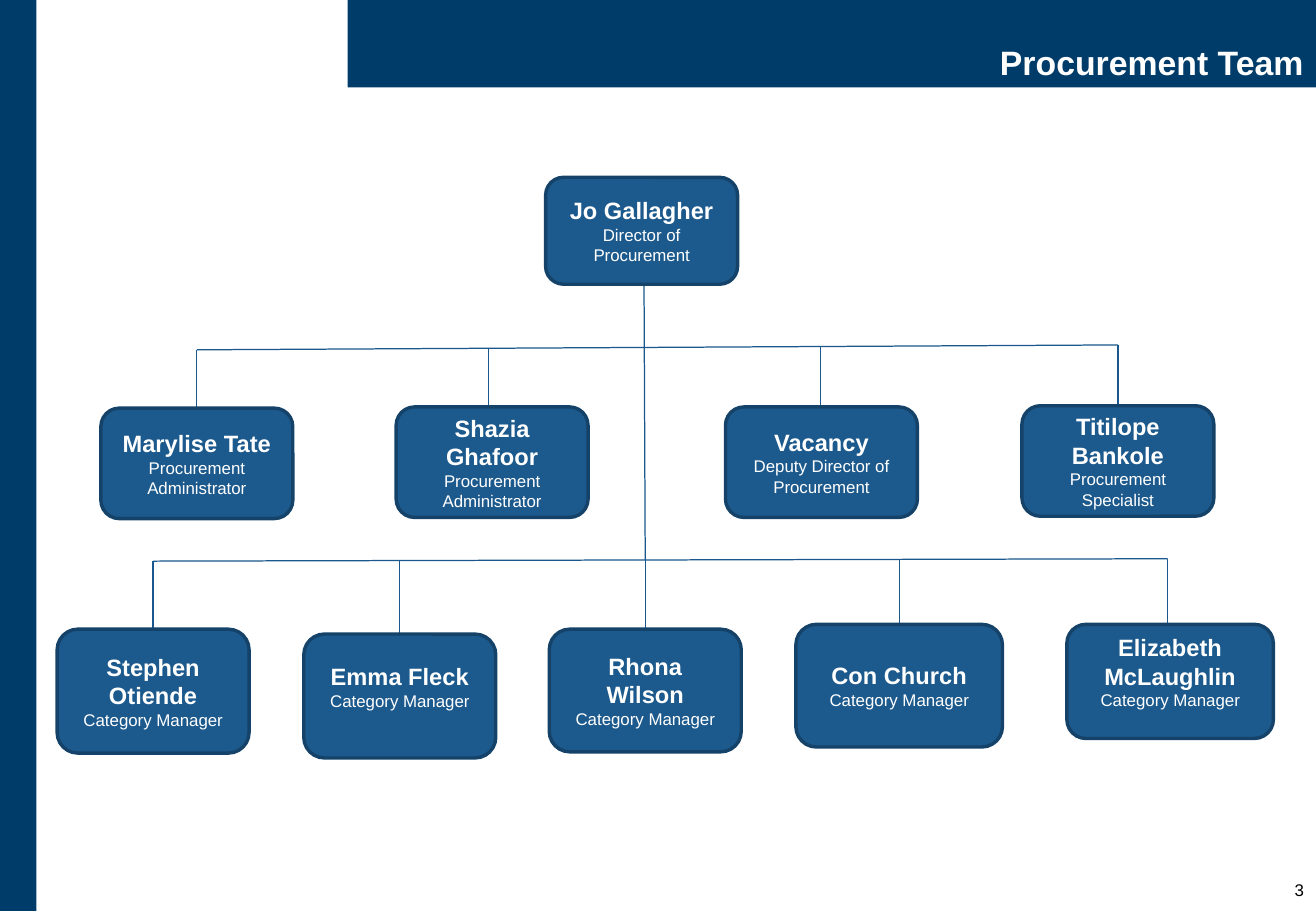
from collections import namedtuple
from dataclasses import dataclass

from lxml.etree import SubElement
from pptx import Presentation
from pptx.dml.color import RGBColor
from pptx.enum.shapes import MSO_CONNECTOR, MSO_SHAPE
from pptx.enum.text import MSO_ANCHOR as Anchor, MSO_AUTO_SIZE, PP_ALIGN as Align
from pptx.oxml.ns import qn
from pptx.util import Inches, Pt


@dataclass(frozen=True)
class Theme:
    font: str = "Arial"
    navy: str = "003C69"
    box: str = "1C598C"
    border: str = "154268"
    link: str = "19578C"
    light: str = "FFFFFF"
    dark: str = "000000"
    title_size: int = 20
    name_size: int = 14
    small_size: int = 10
    border_width: float = 2
    link_width: float = 0.75


THEME = Theme()
BOX_WIDTH, WIDE_BOX = 1.58, 1.7
LOW_MARGIN, RAISED_MARGIN = 0.05, 0.21

# drop is the x of the link from the rail above; bottom is the lower text margin
Member = namedtuple("Member", "name role left top height drop width bottom",
                    defaults=(None, BOX_WIDTH, LOW_MARGIN))
# the rail runs from (x1, y1) to (x2, y2)
Tier = namedtuple("Tier", "rail members")

TITLE = "Procurement Team"
PAGE_NUMBER = "3"
DIRECTOR = Member("Jo Gallagher", "Director of Procurement", 4.49, 1.46, 0.88)
TRUNK = (5.3, 2.34, 5.31, 4.61)
TIERS = [
    Tier((1.62, 2.88, 9.2, 2.84), [
        Member("Marylise Tate", "Procurement Administrator", 0.83, 3.36, 0.91, 1.62),
        Member("Shazia Ghafoor", "Procurement Administrator", 3.26, 3.35, 0.91, 4.02),
        Member("Vacancy", "Deputy Director of Procurement", 5.97, 3.35, 0.91, 6.75),
        Member("Titilope Bankole", "Procurement Specialist", 8.41, 3.34, 0.91, 9.2),
    ]),
    Tier((1.26, 4.62, 9.61, 4.6), [
        Member("Stephen Otiende", "Category Manager", 0.47, 5.18, 1.02, 1.26),
        Member("Emma Fleck", "Category Manager", 2.5, 5.22, 1.02, 3.29,
               bottom=RAISED_MARGIN),
        Member("Rhona Wilson", "Category Manager", 4.52, 5.18, 1.01, 5.31),
        Member("Con Church", "Category Manager", 6.55, 5.14, 1.01, 7.4, WIDE_BOX),
        Member("Elizabeth McLaughlin", "Category Manager", 8.78, 5.14, 0.94, 9.61,
               WIDE_BOX, RAISED_MARGIN),
    ]),
]


def paint(shape, color):
    shape.fill.solid()
    shape.fill.fore_color.rgb = RGBColor.from_string(color)


def add_run(paragraph, text, size, color, bold=False):
    run = paragraph.add_run()
    run.text = text
    run.font.name = THEME.font
    run.font.size = Pt(size)
    run.font.bold = bold
    run.font.color.rgb = RGBColor.from_string(color)


def add_link(slide, x1, y1, x2, y2):
    link = slide.shapes.add_connector(
        MSO_CONNECTOR.STRAIGHT, Inches(x1), Inches(y1), Inches(x2), Inches(y2))
    link.line.color.rgb = RGBColor.from_string(THEME.link)
    link.line.width = Pt(THEME.link_width)
    SubElement(link._element.spPr, qn("a:effectLst"))


def add_member(slide, member):
    box = slide.shapes.add_shape(
        MSO_SHAPE.ROUNDED_RECTANGLE, Inches(member.left), Inches(member.top),
        Inches(member.width), Inches(member.height))
    box.shadow.inherit = False
    paint(box, THEME.box)
    box.line.color.rgb = RGBColor.from_string(THEME.border)
    box.line.width = Pt(THEME.border_width)
    frame = box.text_frame
    frame.word_wrap = True
    frame.vertical_anchor = Anchor.MIDDLE
    frame.margin_bottom = Inches(member.bottom)
    name, role = frame.paragraphs[0], frame.add_paragraph()
    name.alignment = role.alignment = Align.CENTER
    add_run(name, member.name, THEME.name_size, THEME.light, bold=True)
    add_run(role, member.role, THEME.small_size, THEME.light)


def add_tier(slide, tier):
    """Draw the rail, a drop to each member, then the member boxes."""
    x1, y1, x2, y2 = tier.rail
    add_link(slide, *tier.rail)
    for member in tier.members:
        rail_y = y1 + (y2 - y1) * (member.drop - x1) / (x2 - x1)
        add_link(slide, member.drop, rail_y, member.drop, member.top)
        add_member(slide, member)


def add_sidebar(slide):
    sidebar = slide.shapes.add_shape(
        MSO_SHAPE.RECTANGLE, 0, 0, Inches(0.3), Inches(7.5))
    sidebar.shadow.inherit = False
    paint(sidebar, THEME.navy)
    sidebar.line.fill.background()


def add_title(slide):
    title = slide.shapes.title
    title.left, title.top = Inches(2.86), Inches(0)
    title.width, title.height = Inches(7.97), Inches(0.72)
    paint(title, THEME.navy)
    frame = title.text_frame
    frame.auto_size = MSO_AUTO_SIZE.NONE
    frame.vertical_anchor = Anchor.BOTTOM
    frame.margin_left, frame.margin_right = Inches(0.08), Inches(0.1)
    frame.margin_top = frame.margin_bottom = Inches(0.04)
    heading = frame.paragraphs[0]
    heading.alignment = Align.RIGHT
    heading.line_spacing = 0.9
    add_run(heading, TITLE, THEME.title_size, THEME.light, bold=True)


def add_page_number(slide):
    corner = slide.shapes.add_textbox(
        Inches(9.96), Inches(7.19), Inches(0.87), Inches(0.31))
    corner.text_frame.word_wrap = True
    number = corner.text_frame.paragraphs[0]
    number.alignment = Align.RIGHT
    add_run(number, PAGE_NUMBER, THEME.small_size, THEME.dark)


def main():
    deck = Presentation()
    deck.slide_width, deck.slide_height = Inches(10.83), Inches(7.5)
    slide = deck.slides.add_slide(deck.slide_layouts.get_by_name("Title Only"))
    add_sidebar(slide)
    add_title(slide)
    add_page_number(slide)
    add_link(slide, *TRUNK)
    add_member(slide, DIRECTOR)
    for tier in TIERS:
        add_tier(slide, tier)
    deck.save("out.pptx")


if __name__ == "__main__":
    main()
